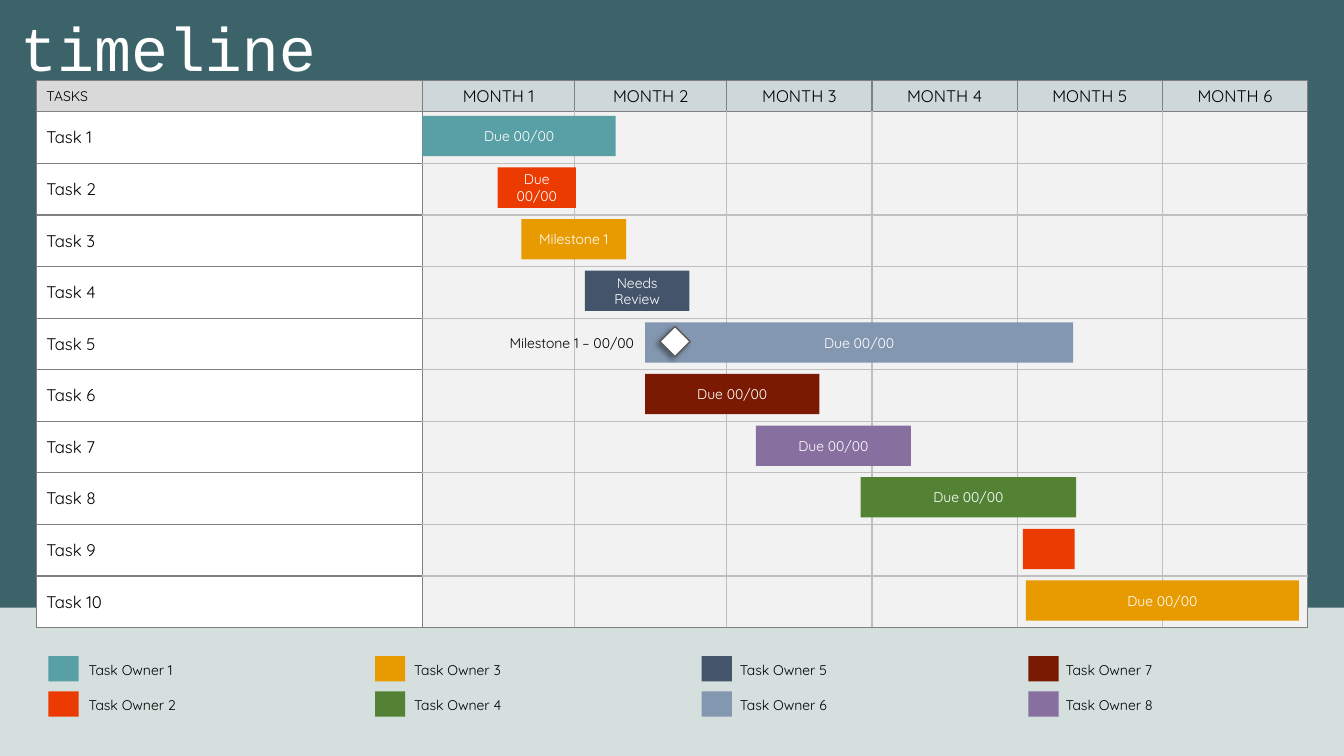
import pptx
import pptx.util
import pptx.dml.color
import pptx.enum.dml
import pptx.enum.shapes
import pptx.enum.text
import pptx.oxml
import pptx.oxml.ns

RGB = pptx.dml.color.RGBColor
SHAPE = pptx.enum.shapes.MSO_SHAPE
ALIGN = pptx.enum.text.PP_ALIGN
ANCHOR = pptx.enum.text.MSO_ANCHOR
FIT = pptx.enum.text.MSO_AUTO_SIZE
Inches, Pt = pptx.util.Inches, pptx.util.Pt

# Colours
WHITE, BLACK = RGB(0xFF, 0xFF, 0xFF), RGB(0, 0, 0)
MIST, PINE = RGB(0xD5, 0xDF, 0xDD), RGB(0x3C, 0x63, 0x6A)
SILVER, PALE = RGB(0xD9, 0xD9, 0xD9), RGB(0xF2, 0xF2, 0xF2)
DARK, LIGHT = RGB(0x80, 0x80, 0x80), RGB(0xBF, 0xBF, 0xBF)
SLATE = RGB(0x59, 0x59, 0x59)
TEAL, RED = RGB(0x58, 0xA0, 0xA5), RGB(0xEB, 0x3B, 0x00)
GOLD, GREEN = RGB(0xE8, 0x9B, 0x00), RGB(0x54, 0x82, 0x35)
NAVY, BLUE = RGB(0x44, 0x54, 0x6A), RGB(0x84, 0x97, 0xB0)
WINE, PLUM = RGB(0x7B, 0x1A, 0x03), RGB(0x87, 0x6F, 0xA0)

# Grid in inches: table edges, rows, and the mean month width
WIDE, HIGH = 13.33, 7.5
LEFT, TOP, HEAD, ROW = 0.36, 0.8, 0.3, 0.512
COLS = [3.83, 1.51, 1.51, 1.44, 1.44, 1.44, 1.44]
START = LEFT + COLS[0]
MONTH = sum(COLS[1:]) / 6
TASKS = 10
BAR = 0.4

# Text formats
SMALL = {"name": "Quicksand", "size": Pt(10)}
LARGE = {"name": "Quicksand", "size": Pt(12)}
TITLE = {"name": "Courier New", "size": Pt(44)}

# Bars: start and length in months, colour, label
BARS = [
    (0, 1.31, TEAL, "Due 00/00"),
    (0.51, 0.53, RED, "Due 00/00"),
    (0.67, 0.71, GOLD, "Milestone 1"),
    (1.1, 0.71, NAVY, "Needs Review"),
    (1.51, 2.9, BLUE, "Due 00/00"),
    (1.51, 1.18, WINE, "Due 00/00"),
    (2.26, 1.05, PLUM, "Due 00/00"),
    (2.97, 1.46, GREEN, "Due 00/00"),
    (4.07, 0.35, RED, ""),
    (4.09, 1.85, GOLD, "Due 00/00"),
]
OWNERS = [TEAL, RED, GOLD, GREEN, NAVY, BLUE, WINE, PLUM]


def apply(item, form):
    for key, value in form.items():
        setattr(item, key, value)


def write(frame, text, form, color, align=ALIGN.LEFT):
    frame.text = text
    line = frame.paragraphs[0]
    line.alignment = align
    font = line.runs[0].font
    apply(font, form)
    font.color.rgb = color


def add_box(slide, place, color, text="", kind=SHAPE.RECTANGLE):
    box = slide.shapes.add_shape(kind, *map(Inches, place))
    box.shadow.inherit = False
    box.fill.solid()
    box.fill.fore_color.rgb = color
    box.line.fill.background()
    if text:
        write(box.text_frame, text, SMALL, WHITE, ALIGN.CENTER)
    return box


def add_label(slide, place, text, form):
    frame = slide.shapes.add_textbox(*map(Inches, place)).text_frame
    write(frame, text, SMALL, BLACK, form.pop("align", ALIGN.LEFT))
    apply(frame, {"word_wrap": True, **form})


def add_edges(cell, colors):
    """Draw the left, right, top and bottom borders before the cell's fill."""
    props = cell._tc.get_or_add_tcPr()
    for spot, (side, color) in enumerate(zip("LRTB", colors)):
        props.insert(spot, pptx.oxml.parse_xml(
            f'<a:ln{side} {pptx.oxml.ns.nsdecls("a")} w="12700"><a:solidFill>'
            f'<a:srgbClr val="{color}"/></a:solidFill></a:ln{side}>'))


def fade(cell, share):
    tint = cell._tc.tcPr.find(".//" + pptx.oxml.ns.qn("a:solidFill") + "/*")
    tint.append(pptx.oxml.parse_xml(
        f'<a:alpha {pptx.oxml.ns.nsdecls("a")} val="{share * 1000}"/>'))


def fill_cell(cell, row, col):
    cell.vertical_anchor = ANCHOR.MIDDLE
    cell.fill.solid()
    color = PALE
    if row == 0:
        color = WHITE if col else SILVER
    elif col == 0:
        color = WHITE
    cell.fill.fore_color.rgb = color
    frame = cell.text_frame
    if row == 0 and col:
        fade(cell, 75)
        write(frame, f"MONTH {col}", LARGE, BLACK, ALIGN.CENTER)
    elif row == 0:
        write(frame, "TASKS", SMALL, BLACK)
    elif col == 0:
        write(frame, f"Task {row}", LARGE, BLACK)
    # Dark lines frame the headings and the outside
    head = row == 0 or col == 0
    darks = (head or col == 1, head or col == len(COLS) - 1,
             head or row == 1, head or row == TASKS)
    add_edges(cell, [DARK if dark else LIGHT for dark in darks])


def add_grid(slide):
    place = LEFT, TOP, sum(COLS), HEAD + TASKS * ROW
    table = slide.shapes.add_table(
        TASKS + 1, len(COLS), *map(Inches, place)).table
    apply(table, {"first_row": False, "horz_banding": False})
    for col, width in enumerate(COLS):
        table.columns[col].width = Inches(width)
    for row in range(TASKS + 1):
        table.rows[row].height = Inches(ROW if row else HEAD)
        for col in range(len(COLS)):
            fill_cell(table.cell(row, col), row, col)


def bar_top(row):
    return TOP + HEAD + row * ROW + 0.05


def add_mark(slide, row, month):
    place = START + month * MONTH, bar_top(row) + 0.04, 0.3, 0.3
    mark = add_box(slide, place, WHITE, kind=SHAPE.DIAMOND)
    mark.line.color.rgb = SLATE
    mark.line.width = Pt(1)
    glow = mark.element.spPr.find(pptx.oxml.ns.qn("a:effectLst"))
    glow.append(pptx.oxml.parse_xml(
        f'<a:outerShdw {pptx.oxml.ns.nsdecls("a")} blurRad="50800" '
        'dist="38100" dir="8100000"><a:srgbClr val="000000">'
        '<a:alpha val="40000"/></a:srgbClr></a:outerShdw>'))
    add_label(slide, (START, bar_top(row), 1.5 * MONTH, BAR),
              "Milestone 1 – 00/00",
              {"align": ALIGN.RIGHT, "vertical_anchor": ANCHOR.MIDDLE})


def add_owner(slide, spot, color):
    col, row = divmod(spot, 2)
    top = 6.51 + 0.35 * row
    add_box(slide, (0.48 + 3.24 * col, top, 0.3, 0.25), color)
    add_label(slide, (0.78 + 3.23 * col, top, 2.4, 0.27),
              f"Task Owner {spot + 1}", {})


def set_title(slide, text):
    title = slide.shapes.title
    place = 0, 0, 9.43, 0.83
    apply(title, dict(zip(("left", "top", "width", "height"),
                          map(Inches, place))))
    frame = title.text_frame
    apply(frame, {"margin_left": Inches(0.2), "margin_top": Inches(0.1),
                  "margin_right": 0, "margin_bottom": 0, "word_wrap": True,
                  "auto_size": FIT.NONE, "vertical_anchor": ANCHOR.TOP})
    write(frame, text, TITLE, WHITE)
    slide.shapes.element.append(title.element)  # bring to front


def main():
    deck = pptx.Presentation()
    apply(deck, {"slide_width": Inches(WIDE), "slide_height": Inches(HIGH)})
    slide = deck.slides.add_slide(deck.slide_layouts[5])

    # Backdrop
    slide.background.fill.solid()
    slide.background.fill.fore_color.rgb = MIST
    add_box(slide, (0, 0, WIDE, 6.03), PINE)

    # Chart
    add_grid(slide)
    for row, (start, span, color, text) in enumerate(BARS):
        place = START + start * MONTH, bar_top(row), span * MONTH, BAR
        add_box(slide, place, color, text)

    # Legend
    for spot, color in enumerate(OWNERS):
        add_owner(slide, spot, color)

    # Milestone and title
    add_mark(slide, 4, 1.61)
    set_title(slide, "timeline")
    deck.save("out.pptx")


if __name__ == "__main__":
    main()
